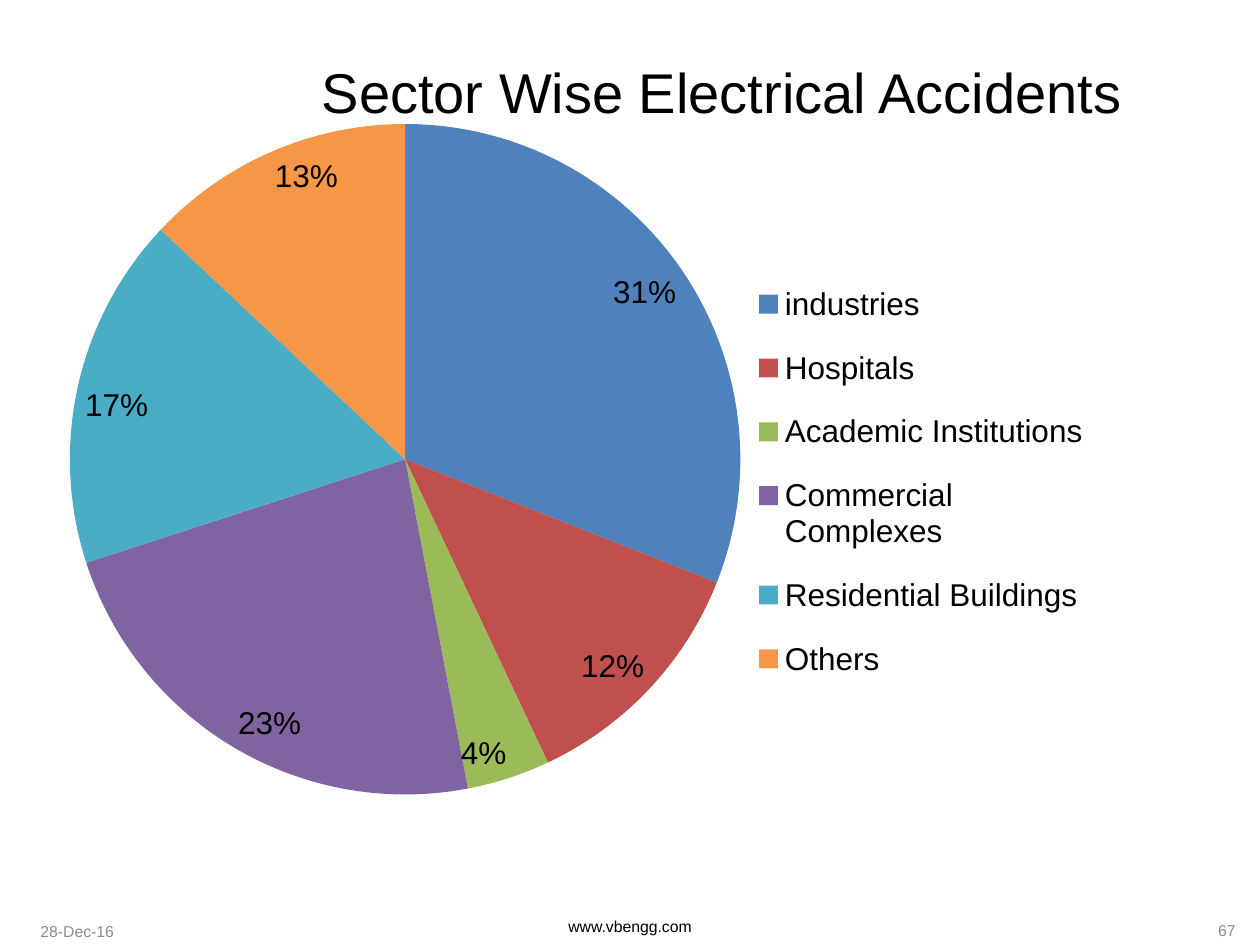
from lxml.etree import SubElement
from pptx import Presentation
from pptx.chart.data import CategoryChartData
from pptx.dml.color import RGBColor
from pptx.enum.chart import XL_CHART_TYPE, XL_LABEL_POSITION, XL_LEGEND_POSITION
from pptx.enum.text import MSO_ANCHOR, PP_ALIGN
from pptx.oxml.ns import qn
from pptx.util import Pt

PIXEL = 914400 // 126
FONT = "Arial"
COLORS = {
    "text": "000000",
    "muted": "8C8C8C",
    "industries": "4F81BD",
    "Hospitals": "C0504D",
    "Academic Institutions": "9BBB59",
    "Commercial Complexes": "8064A2",
    "Residential Buildings": "4BACC6",
    "Others": "F79646",
}
TITLE = "Sector Wise Electrical Accidents "
TITLE_BOX = (242, 53, 976, 84)
SECTORS = [
    ("industries", 0.31),
    ("Hospitals", 0.12),
    ("Academic Institutions", 0.04),
    ("Commercial Complexes", 0.23),
    ("Residential Buildings", 0.17),
    ("Others", 0.13),
]
CHART_BOX = (53, 94, 1061, 766)
PIE_BOX = (70, 124, 671, 671)
LEGEND_BOX = (748, 258, 346, 447)
FOOTERS = [
    ("28-Dec-16", (28, 906, 284, 50), PP_ALIGN.LEFT, "muted"),
    ("www.vbengg.com", (417, 901, 426, 50), PP_ALIGN.CENTER, "text"),
    ("67", (964, 906, 284, 48), PP_ALIGN.RIGHT, "muted"),
]


def scaled(box):
    return [value * PIXEL for value in box]


def style_font(font, size, color):
    font.name = FONT
    font.size = Pt(size)
    font.color.rgb = RGBColor.from_string(COLORS[color])


def write_text(shape, text, size, color, alignment):
    frame = shape.text_frame
    frame.word_wrap = True
    frame.vertical_anchor = MSO_ANCHOR.MIDDLE
    paragraph = frame.paragraphs[0]
    paragraph.alignment = alignment
    run = paragraph.add_run()
    run.text = text
    style_font(run.font, size, color)
    return paragraph


def make_layout(parent, box, inner=False):
    for existing in parent.findall(qn("c:layout")):
        parent.remove(existing)
    layout = SubElement(parent, qn("c:layout"))
    manual = SubElement(layout, qn("c:manualLayout"))
    left, top, width, height = CHART_BOX
    settings = [("layoutTarget", "inner")] if inner else []
    settings += [
        ("xMode", "edge"),
        ("yMode", "edge"),
        ("x", round((box[0] - left) / width, 3)),
        ("y", round((box[1] - top) / height, 3)),
        ("w", round(box[2] / width, 3)),
        ("h", round(box[3] / height, 3)),
    ]
    for tag, value in settings:
        SubElement(manual, qn(f"c:{tag}")).set("val", str(value))
    return layout


def add_pie(slide):
    data = CategoryChartData(number_format="0%")
    data.categories = [name for name, share in SECTORS]
    data.add_series("Series 1", [share for name, share in SECTORS])
    chart = slide.shapes.add_chart(XL_CHART_TYPE.PIE, *scaled(CHART_BOX), data).chart
    chart.has_title = False
    style_font(chart.font, 18, "text")

    plot = chart.plots[0]
    plot.vary_by_categories = True
    for index, (name, share) in enumerate(SECTORS):
        fill = plot.series[0].points[index].format.fill
        fill.solid()
        fill.fore_color.rgb = RGBColor.from_string(COLORS[name])

    plot.has_data_labels = True
    labels = plot.data_labels
    labels.show_value = True
    labels.show_percentage = False
    labels.number_format = "0%"
    labels.number_format_is_linked = False
    labels.position = XL_LABEL_POSITION.INSIDE_END
    style_font(labels.font, 18, "text")

    chart.has_legend = True
    legend = chart.legend
    legend.position = XL_LEGEND_POSITION.RIGHT
    legend.include_in_layout = False
    style_font(legend.font, 18, "text")

    plot_area = chart._chartSpace.find(".//" + qn("c:plotArea"))
    plot_area.insert(0, make_layout(plot_area, PIE_BOX, inner=True))
    legend_element = chart._chartSpace.find(".//" + qn("c:legend"))
    legend_layout = make_layout(legend_element, LEGEND_BOX)
    legend_element.find(qn("c:overlay")).addprevious(legend_layout)


def main():
    presentation = Presentation()
    presentation.slide_width, presentation.slide_height = scaled((1260, 945))
    slide = presentation.slides.add_slide(presentation.slide_layouts[5])

    title = slide.shapes.title
    title.left, title.top, title.width, title.height = scaled(TITLE_BOX)
    write_text(title, TITLE, 32, "text", PP_ALIGN.CENTER).line_spacing = 0.9

    add_pie(slide)

    for text, box, alignment, color in FOOTERS:
        footer = slide.shapes.add_textbox(*scaled(box))
        write_text(footer, text, 9, color, alignment)

    presentation.save("out.pptx")


if __name__ == "__main__":
    main()
